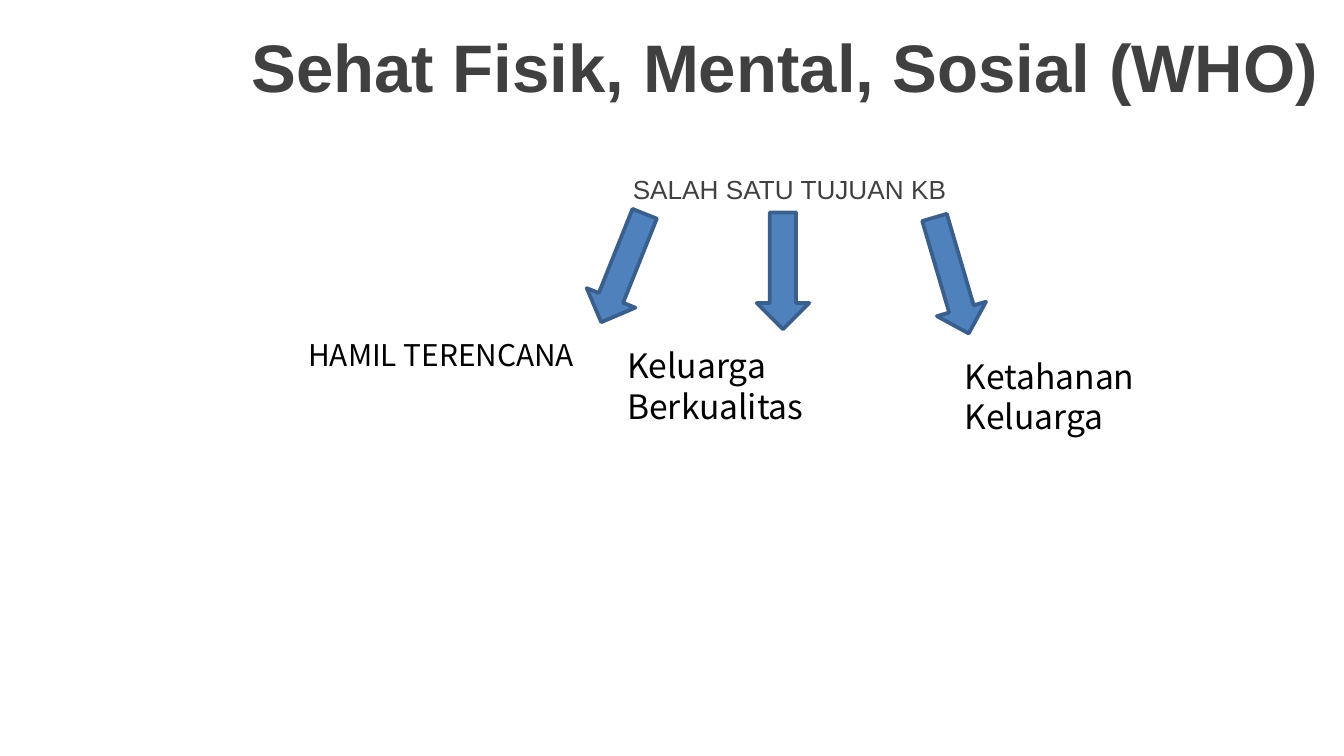
from dataclasses import dataclass

from pptx import Presentation
from pptx.dml.color import RGBColor
from pptx.enum.shapes import MSO_SHAPE
from pptx.enum.text import MSO_ANCHOR, MSO_AUTO_SIZE, PP_ALIGN
from pptx.util import Pt

GREY = "404040"
BLACK = "000000"
ARROW_FILL = "4F81BD"
ARROW_EDGE = "3A5F8C"
HEADING_FONT = "Arial"
GOAL_FONT = "Noto Sans CJK KR"


@dataclass(frozen=True)
class Box:
    left: float
    top: float
    width: float
    height: float

    def lengths(self) -> tuple:
        return Pt(self.left), Pt(self.top), Pt(self.width), Pt(self.height)


@dataclass(frozen=True)
class Label:
    text: str
    box: Box
    size: float
    font: str = GOAL_FONT
    color: str = BLACK
    inset: float = 7.2


@dataclass(frozen=True)
class Arrow:
    box: Box
    rotation: float = 0


TITLE = Label("Sehat Fisik, Mental, Sosial (WHO)", Box(127.5, 0, 592.5, 69.8), 36, HEADING_FONT, GREY)
LABELS = (
    Label("SALAH SATU TUJUAN KB", Box(157, 89.3, 544.3, 278), 14, HEADING_FONT, GREY, 182),
    Label("HAMIL TERENCANA", Box(144.7, 177.1, 189.4, 26.6), 16, inset=20.5),
    Label("Keluarga Berkualitas", Box(329, 181.4, 180.7, 28.8), 18),
    Label("Ketahanan Keluarga", Box(509.8, 187.2, 178.6, 28.8), 18),
)
ARROWS = (
    Arrow(Box(319.7, 112.3, 28.1, 62.6), 21.8),
    Arrow(Box(405.4, 113.8, 28.1, 62.6)),
    Arrow(Box(496.1, 115.2, 27.4, 64.8), 343.6),
)


def rgb(color: str) -> RGBColor:
    return RGBColor.from_string(color)


def write_label(shape, label: Label, bold: bool = False) -> None:
    frame = shape.text_frame
    frame.word_wrap = True
    frame.auto_size = MSO_AUTO_SIZE.NONE
    frame.margin_left = Pt(label.inset)
    paragraph = frame.paragraphs[0]
    paragraph.text = label.text
    paragraph.alignment = PP_ALIGN.LEFT
    paragraph.font.name = label.font
    paragraph.font.size = Pt(label.size)
    paragraph.font.bold = bold
    paragraph.font.color.rgb = rgb(label.color)


def draw_title(slide, label: Label) -> None:
    title = slide.shapes.title
    title.left, title.top, title.width, title.height = label.box.lengths()
    write_label(title, label, bold=True)
    title.text_frame.vertical_anchor = MSO_ANCHOR.MIDDLE


def draw_label(slide, label: Label) -> None:
    write_label(slide.shapes.add_textbox(*label.box.lengths()), label)


def draw_arrow(slide, arrow: Arrow) -> None:
    shape = slide.shapes.add_shape(MSO_SHAPE.DOWN_ARROW, *arrow.box.lengths())
    shape.rotation = arrow.rotation
    shape.shadow.inherit = False
    shape.fill.solid()
    shape.fill.fore_color.rgb = rgb(ARROW_FILL)
    shape.line.color.rgb = rgb(ARROW_EDGE)
    shape.line.width = Pt(2)


def main() -> None:
    presentation = Presentation()
    presentation.slide_width = Pt(720)
    presentation.slide_height = Pt(405)
    slide = presentation.slides.add_slide(presentation.slide_layouts[5])
    draw_title(slide, TITLE)
    for arrow in ARROWS:
        draw_arrow(slide, arrow)
    for label in LABELS:
        draw_label(slide, label)
    presentation.save("out.pptx")


if __name__ == "__main__":
    main()
